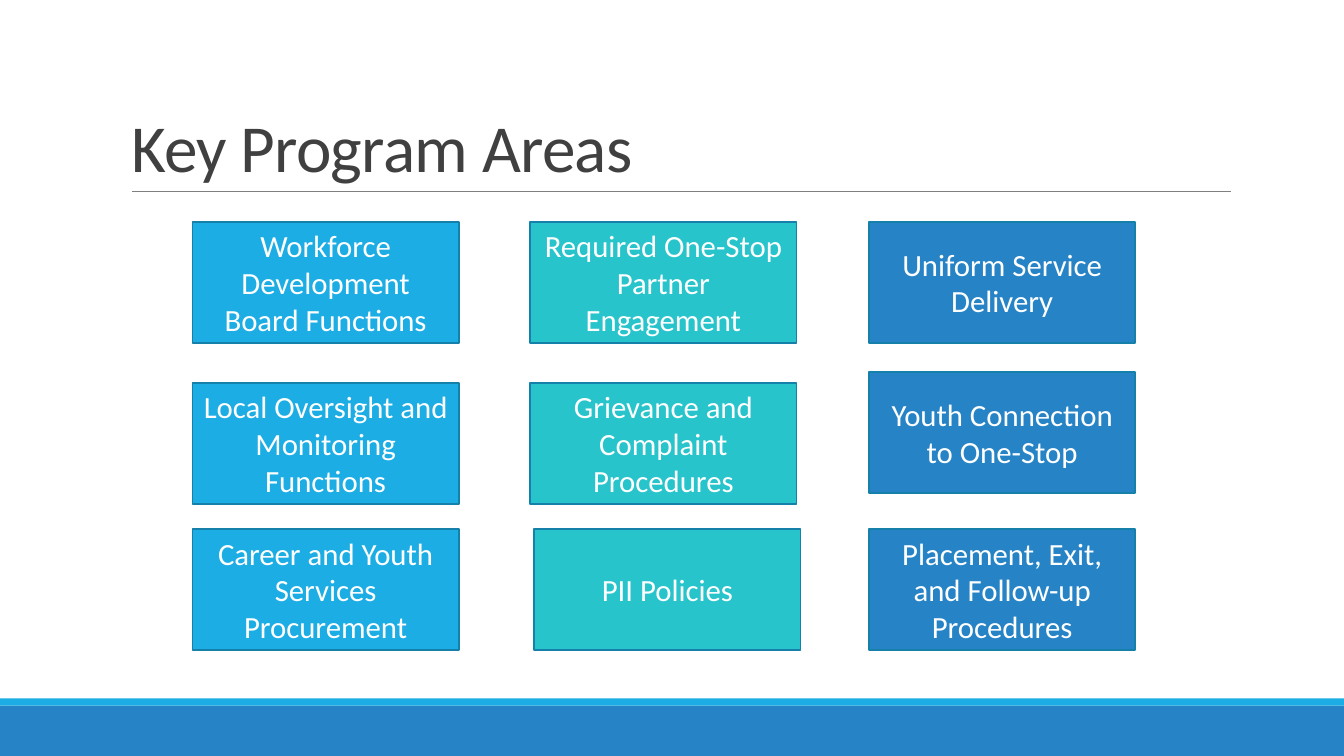
import pptx
import pptx.dml.color
import pptx.enum.shapes
import pptx.enum.text
import pptx.oxml.ns
import pptx.util
import lxml.etree

EMU_PER_PX = 9144
WIDTH, HEIGHT = 1333, 750
SKY, TEAL, BLUE = "1CADE4", "28C4CC", "2683C6"
OUTLINE, GREY, DARK, WHITE = "1580A9", "808080", "404040", "FFFFFF"


def px(length):
    return pptx.util.Emu(length * EMU_PER_PX)


def color(hex_string):
    return pptx.dml.color.RGBColor.from_string(hex_string)


class SlideBuilder:
    font_name = "Calibri"
    box_size = (264, 120)
    box_text_size = 22
    title_size = 48

    def __init__(self, slide):
        self.slide = slide

    def style_text(self, paragraph, size, text_color, alignment):
        paragraph.alignment = alignment
        paragraph.font.name = self.font_name
        paragraph.font.size = pptx.util.Pt(size)
        paragraph.font.color.rgb = color(text_color)

    def title(self, text, left, top, width, height):
        shape = self.slide.shapes.title
        shape.left, shape.top = px(left), px(top)
        shape.width, shape.height = px(width), px(height)
        frame = shape.text_frame
        frame.text = text
        frame.word_wrap = True
        frame.auto_size = pptx.enum.text.MSO_AUTO_SIZE.NONE
        frame.vertical_anchor = pptx.enum.text.MSO_ANCHOR.BOTTOM
        paragraph = frame.paragraphs[0]
        paragraph.line_spacing = 0.85
        self.style_text(paragraph, self.title_size, DARK, pptx.enum.text.PP_ALIGN.LEFT)
        for properties in shape.element.xpath(".//a:defRPr"):
            properties.set("spc", "-50")

    def rectangle(self, left, top, width, height, fill):
        shape = self.slide.shapes.add_shape(
            pptx.enum.shapes.MSO_SHAPE.RECTANGLE, px(left), px(top), px(width), px(height)
        )
        shape.shadow.inherit = False
        shape.fill.solid()
        shape.fill.fore_color.rgb = color(fill)
        shape.line.fill.background()
        return shape

    def box(self, text, left, top, fill):
        shape = self.rectangle(left, top, *self.box_size, fill)
        shape.line.color.rgb = color(OUTLINE)
        shape.line.width = pptx.util.Pt(1.25)
        frame = shape.text_frame
        frame.text = text
        frame.word_wrap = True
        frame.vertical_anchor = pptx.enum.text.MSO_ANCHOR.MIDDLE
        self.style_text(
            frame.paragraphs[0], self.box_text_size, WHITE, pptx.enum.text.PP_ALIGN.CENTER
        )

    def rule(self, left, right, top):
        connector = self.slide.shapes.add_connector(
            pptx.enum.shapes.MSO_CONNECTOR.STRAIGHT, px(left), px(top), px(right), px(top)
        )
        connector.line.color.rgb = color(GREY)
        connector.line.width = pptx.util.Pt(0.5)
        properties = connector.element.find(pptx.oxml.ns.qn("p:spPr"))
        lxml.etree.SubElement(properties, pptx.oxml.ns.qn("a:effectLst"))


def main():
    presentation = pptx.Presentation()
    presentation.slide_width, presentation.slide_height = px(WIDTH), px(HEIGHT)
    slide = presentation.slides.add_slide(presentation.slide_layouts[5])
    builder = SlideBuilder(slide)

    builder.rectangle(0, 700, WIDTH, 50, BLUE)
    builder.rectangle(0, 693, WIDTH, 7, SKY)
    builder.rule(131, 1221, 190)
    builder.title("Key Program Areas", 120, 31, 1100, 159)

    program_columns = [
        (SKY, [
            ("Workforce Development Board Functions", 191, 220),
            ("Local Oversight and Monitoring Functions", 191, 380),
            ("Career and Youth Services Procurement", 191, 525),
        ]),
        (TEAL, [
            ("Required One-Stop Partner Engagement", 526, 220),
            ("Grievance and Complaint Procedures", 526, 380),
            ("PII Policies", 530, 525),
        ]),
        (BLUE, [
            ("Uniform Service Delivery", 862, 220),
            ("Youth Connection to One-Stop", 862, 369),
            ("Placement, Exit, and Follow-up Procedures", 862, 525),
        ]),
    ]
    for fill, areas in program_columns:
        for text, left, top in areas:
            builder.box(text, left, top, fill)

    presentation.save("out.pptx")


if __name__ == "__main__":
    main()
